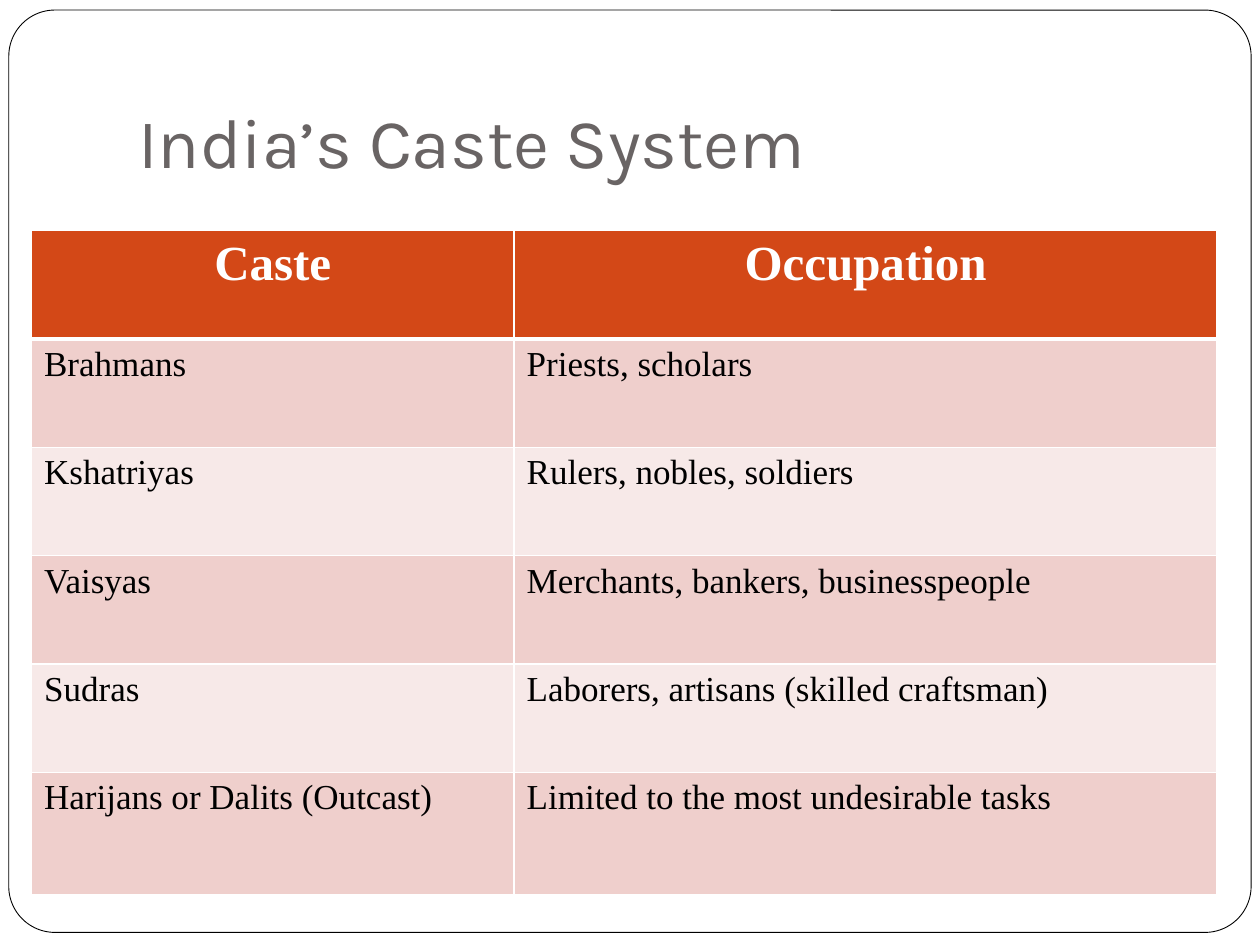
from dataclasses import dataclass

from lxml import etree
from pptx import Presentation
from pptx import util as u
from pptx.dml.color import RGBColor
from pptx.enum import shapes, text
from pptx.oxml import ns

WHITE, BLACK, GREY = "FFFFFF", "000000", "696464"
ORANGE, ROSE, PALE_ROSE = "D34817", "EFCFCC", "F7E9E8"
SERIF, SANS = "Times New Roman", "Karla"


@dataclass(frozen=True)
class Style:
    font: str
    size: int
    color: str
    bold: bool = False
    align: text.PP_ALIGN = text.PP_ALIGN.LEFT


@dataclass(frozen=True)
class Caste:
    name: str
    occupation: str


TITLE = Style(SANS, 40, GREY)
HEADER = Style(SERIF, 28, WHITE, True, text.PP_ALIGN.CENTER)
BODY = Style(SERIF, 20, BLACK)

HEADING = Caste("Caste", "Occupation")
CASTES = [
    Caste("Brahmans", "Priests, scholars"),
    Caste("Kshatriyas", "Rulers, nobles, soldiers"),
    Caste("Vaisyas", "Merchants, bankers, businesspeople"),
    Caste("Sudras", "Laborers, artisans (skilled craftsman)"),
    Caste("Harijans or Dalits (Outcast)", "Limited to the most undesirable tasks"),
]
COLUMN_WIDTHS = [3.83, 5.58]
ROW_HEIGHTS = [0.86] * len(CASTES) + [0.97]


def rgb(color: str) -> RGBColor:
    return RGBColor.from_string(color)


def write(frame, words: str, style: Style) -> None:
    paragraph = frame.paragraphs[0]
    paragraph.alignment = style.align
    run = paragraph.add_run()
    run.text = words
    run.font.name = style.font
    run.font.size = u.Pt(style.size)
    run.font.bold = style.bold
    run.font.color.rgb = rgb(style.color)


def add_borders(cell, widths: dict[str, float]) -> None:
    """Set white cell edges; they must come before the fill in the XML."""
    properties = cell._tc.get_or_add_tcPr()
    for edge, points in widths.items():
        line = etree.SubElement(properties, ns.qn(f"a:{edge}"), w=str(u.Pt(points)))
        fill = etree.SubElement(line, ns.qn("a:solidFill"))
        etree.SubElement(fill, ns.qn("a:srgbClr"), val=WHITE)


def fill_row(table, row: int, caste: Caste, style: Style, color: str) -> None:
    top = 3 if row == 1 else 1
    bottom = 3 if row == 0 else 1
    for column, words in enumerate((caste.name, caste.occupation)):
        cell = table.cell(row, column)
        add_borders(cell, {"lnL": 1, "lnR": 1, "lnT": top, "lnB": bottom})
        cell.fill.solid()
        cell.fill.fore_color.rgb = rgb(color)
        write(cell.text_frame, words, style)


def add_frame(slide) -> None:
    frame = slide.shapes.add_shape(
        shapes.MSO_SHAPE.ROUNDED_RECTANGLE,
        u.Inches(0.07), u.Inches(0.08), u.Inches(9.86), u.Inches(7.32))
    frame.adjustments[0] = 0.05
    frame.shadow.inherit = False
    frame.fill.solid()
    frame.fill.fore_color.rgb = rgb(WHITE)
    frame.line.color.rgb = rgb(BLACK)
    frame.line.width = u.Pt(0.5)


def add_title(slide, words: str) -> None:
    title = slide.shapes.add_textbox(
        u.Inches(1), u.Inches(0.3), u.Inches(8.5), u.Inches(1.25)).text_frame
    title.word_wrap = True
    title.vertical_anchor = text.MSO_ANCHOR.BOTTOM
    title.margin_bottom = u.Inches(0.1)
    write(title, words, TITLE)


def add_caste_table(slide) -> None:
    table = slide.shapes.add_table(
        len(ROW_HEIGHTS), len(COLUMN_WIDTHS), u.Inches(0.25), u.Inches(1.83),
        u.Inches(sum(COLUMN_WIDTHS)), u.Inches(sum(ROW_HEIGHTS))).table
    for column, width in zip(table.columns, COLUMN_WIDTHS):
        column.width = u.Inches(width)
    for row, height in zip(table.rows, ROW_HEIGHTS):
        row.height = u.Inches(height)
    fill_row(table, 0, HEADING, HEADER, ORANGE)
    for row, caste in enumerate(CASTES, start=1):
        fill_row(table, row, caste, BODY, ROSE if row % 2 else PALE_ROSE)


def main() -> None:
    deck = Presentation()
    deck.slide_width, deck.slide_height = u.Inches(10), u.Inches(7.5)
    slide = deck.slides.add_slide(deck.slide_layouts[6])

    # Rounded border, heading, then the table of castes
    add_frame(slide)
    add_title(slide, "India’s Caste System")
    add_caste_table(slide)
    deck.save("out.pptx")


if __name__ == "__main__":
    main()
